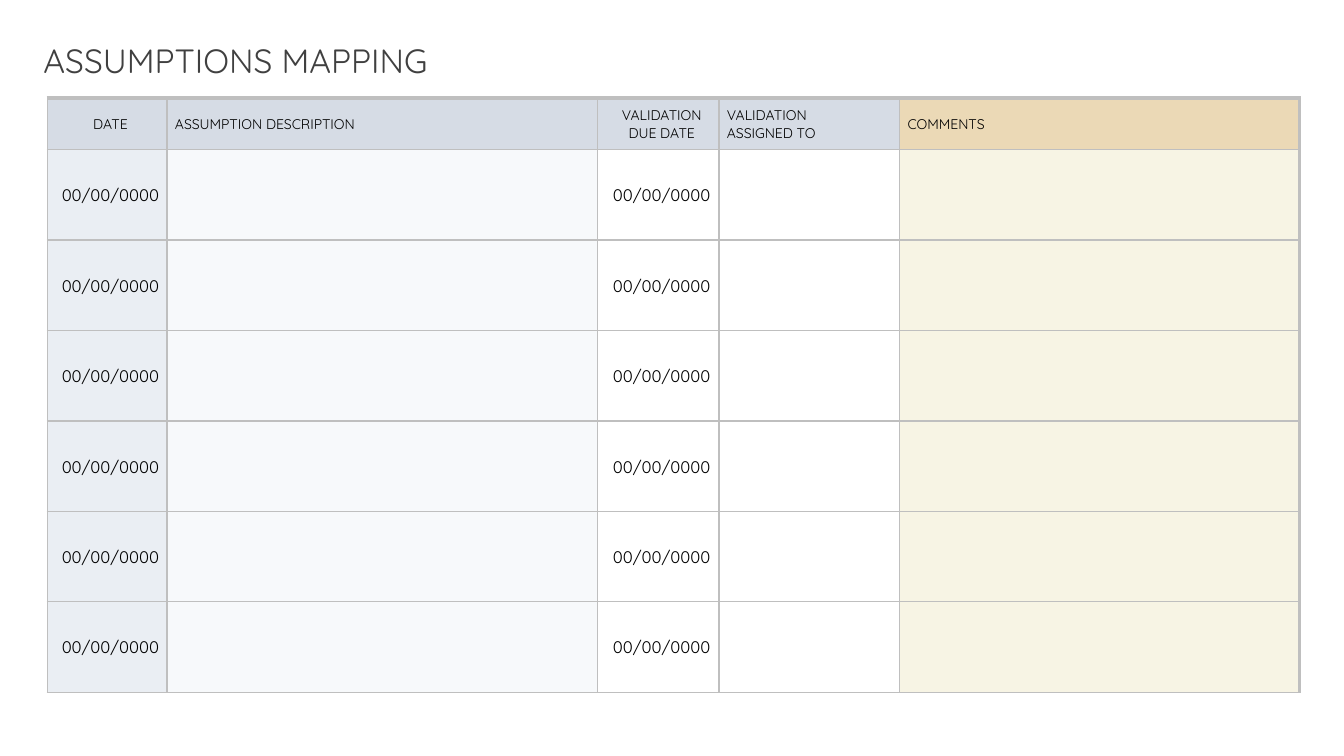
import pptx
import pptx.util
import pptx.dml.color
import pptx.enum.text
import pptx.oxml.ns
from lxml import etree

Cm, Pt = pptx.util.Cm, pptx.util.Pt
ALIGN = pptx.enum.text.PP_ALIGN
MIDDLE = pptx.enum.text.MSO_ANCHOR.MIDDLE


def color(hex_string):
    return pptx.dml.color.RGBColor.from_string(hex_string)


def write(tf, text, size=12, fill="000000", align=ALIGN.LEFT, font="Quicksand"):
    """Fill a text frame, one paragraph per line of text."""
    for i, line in enumerate(text.split("\n")):
        p = tf.paragraphs[0] if i == 0 else tf.add_paragraph()
        p.alignment = align
        r = p.add_run()
        r.text = line
        r.font.name = font
        r.font.size = Pt(size)
        r.font.color.rgb = color(fill)


class Deck:
    line = "BFBFBF"

    def __init__(self):
        self.prs = pptx.Presentation()
        self.prs.slide_width, self.prs.slide_height = Cm(33.87), Cm(19.05)
        self.s = self.prs.slides.add_slide(self.prs.slide_layouts[5])

    def title(self, text, x, y, w, h):
        sp = self.s.shapes.title
        sp.left, sp.top, sp.width, sp.height = Cm(x), Cm(y), Cm(w), Cm(h)
        tf = sp.text_frame
        tf.word_wrap = True
        tf.auto_size = pptx.enum.text.MSO_AUTO_SIZE.NONE
        tf.vertical_anchor = MIDDLE
        write(tf, text, size=24, fill="404040")

    def table(self, x, y, widths, heights):
        frame = self.s.shapes.add_table(len(heights), len(widths), Cm(x), Cm(y),
                                        Cm(sum(widths)), Cm(sum(heights)))
        table = frame.table
        table.first_row = table.horz_banding = False
        for column, width in zip(table.columns, widths):
            column.width = Cm(width)
        for row, height in zip(table.rows, heights):
            row.height = Cm(height)
        return table

    def cell(self, cell, fill, text="", top=1, right=1, **fmt):
        cell.margin_left, cell.margin_top = Cm(0.2), Cm(0.03)
        cell.margin_right, cell.margin_bottom = Cm(0.03), 0
        cell.vertical_anchor = MIDDLE
        # Borders stand before the fill in the cell properties
        qn = pptx.oxml.ns.qn
        tc_pr = cell._tc.get_or_add_tcPr()
        for side, width in (("L", 1), ("R", right), ("T", top), ("B", 1)):
            ln = etree.SubElement(tc_pr, qn("a:ln" + side), w=str(Pt(width)))
            solid = etree.SubElement(ln, qn("a:solidFill"))
            etree.SubElement(solid, qn("a:srgbClr"), val=self.line)
        cell.fill.solid()
        cell.fill.fore_color.rgb = color(fill)
        if text:
            write(cell.text_frame, text, **fmt)


def main():
    deck = Deck()
    deck.title("ASSUMPTIONS MAPPING", 0.84, 0.89, 20.52, 1.27)

    # Columns: width, heading, heading fill, body fill, body text, alignment
    date = "00/00/0000"
    columns = [
        (3.02, "DATE", "D6DCE5", "EAEEF3", date, ALIGN.CENTER),
        (10.85, "ASSUMPTION DESCRIPTION", "D6DCE5", "F7F9FB", "", ALIGN.LEFT),
        (3.06, "VALIDATION\nDUE DATE", "D6DCE5", "FFFFFF", date, ALIGN.CENTER),
        (4.55, "VALIDATION\nASSIGNED TO", "D6DCE5", "FFFFFF", "", ALIGN.LEFT),
        (10.08, "COMMENTS", "EBD9B6", "F7F4E4", "", ALIGN.LEFT),
    ]
    entries = 6
    table = deck.table(1.19, 2.47, [c[0] for c in columns],
                       [1.3] + [2.28] * entries)

    # Heading and entries, with a heavier top and right edge
    for i, (_, heading, head_fill, body_fill, body, align) in enumerate(columns):
        right = 2.25 if i == len(columns) - 1 else 1
        deck.cell(table.cell(0, i), head_fill, heading, top=3, right=right,
                  size=10, align=align)
        for row in range(1, entries + 1):
            deck.cell(table.cell(row, i), body_fill, body, right=right, align=align)

    deck.prs.save("out.pptx")


if __name__ == "__main__":
    main()
